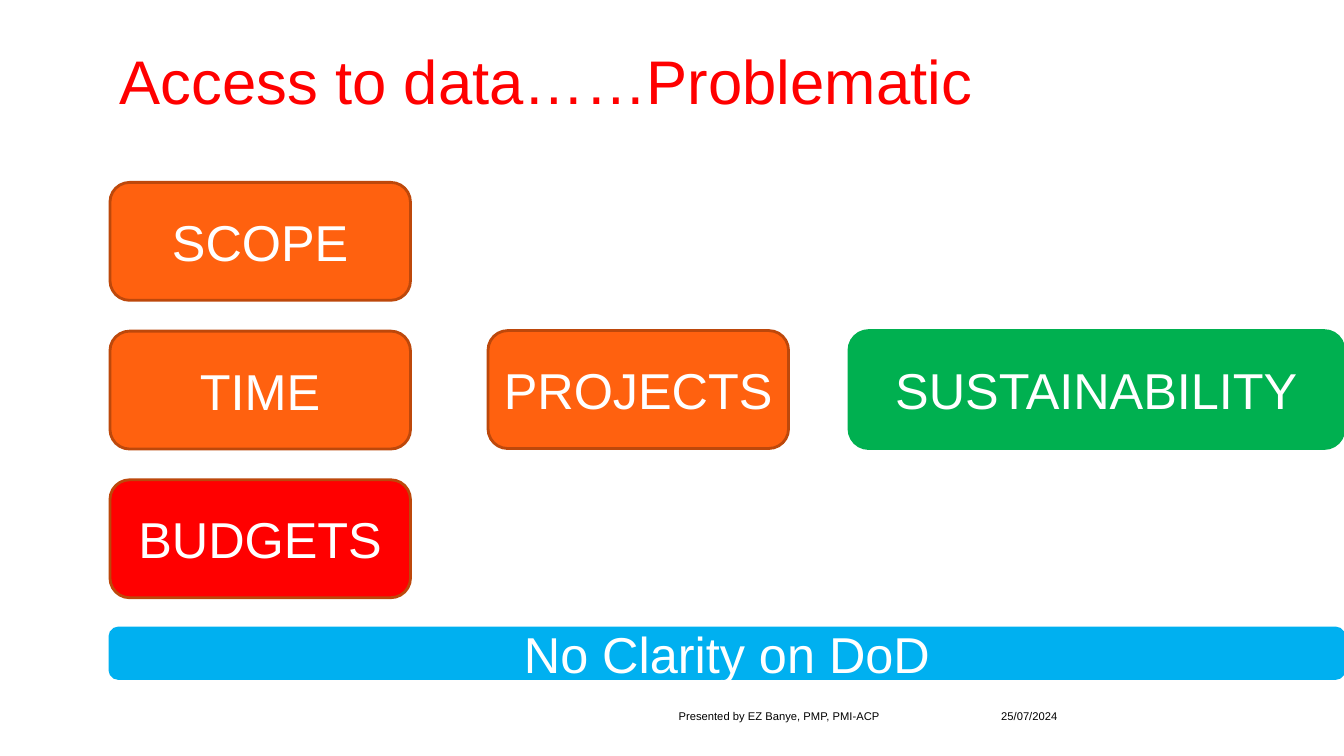
from dataclasses import dataclass

from pptx import Presentation
from pptx.dml.color import RGBColor
from pptx.enum.shapes import MSO_SHAPE
from pptx.enum.text import MSO_ANCHOR, MSO_AUTO_SIZE, PP_ALIGN
from pptx.util import Inches, Pt

ROUND = MSO_SHAPE.ROUNDED_RECTANGLE
MIDDLE, BOTTOM, TOP = MSO_ANCHOR.MIDDLE, MSO_ANCHOR.BOTTOM, MSO_ANCHOR.TOP
CENTER, LEFT = PP_ALIGN.CENTER, PP_ALIGN.LEFT
GROW, FIXED = MSO_AUTO_SIZE.SHAPE_TO_FIT_TEXT, MSO_AUTO_SIZE.NONE
GRID = 100


@dataclass(frozen=True)
class Theme:
    font: str = "Arial"
    head: int = 44
    label: int = 36
    foot: int = 8
    line: int = 2
    orange: str = "FF610F"
    rust: str = "BD480B"
    red: str = "FF0000"
    green: str = "00B050"
    blue: str = "00B0F0"
    white: str = "FFFFFF"
    black: str = "000000"


def apply(target, values):
    for name, value in values.items():
        setattr(target, name, value)


class Deck:
    def __init__(self, theme):
        self.theme = theme
        self.show = Presentation()
        apply(self.show, {"slide_width": Inches(13.33), "slide_height": Inches(7.5)})
        self.slide = self.show.slides.add_slide(self.show.slide_layouts[6])

    def place(self, col, row, cols, rows):
        wide, high = self.show.slide_width, self.show.slide_height
        pairs = (col, wide), (row, high), (cols, wide), (rows, high)
        return [round(part * whole / GRID) for part, whole in pairs]

    def label(self, shape, text, size, color, align, frame):
        apply(shape.text_frame, {"word_wrap": True, **frame})
        para = shape.text_frame.paragraphs[0]
        para.alignment = align
        run = para.add_run()
        run.text = text
        apply(run.font, {"name": self.theme.font, "size": Pt(size)})
        run.font.color.rgb = RGBColor.from_string(color)

    def box(self, text, cell, fill, edge):
        shape = self.slide.shapes.add_shape(ROUND, *self.place(*cell))
        shape.shadow.inherit = False
        shape.fill.solid()
        shape.fill.fore_color.rgb = RGBColor.from_string(fill)
        shape.line.color.rgb = RGBColor.from_string(edge)
        shape.line.width = Pt(self.theme.line)
        frame = {"vertical_anchor": MIDDLE}
        self.label(shape, text, self.theme.label, self.theme.white, CENTER, frame)

    def title(self, text, cell):
        shape = self.slide.shapes.add_textbox(*self.place(*cell))
        frame = {"vertical_anchor": TOP, "auto_size": GROW}
        self.label(shape, text, self.theme.head, self.theme.red, LEFT, frame)

    def footer(self, text, cell):
        shape = self.slide.shapes.add_textbox(*self.place(*cell))
        frame = {"vertical_anchor": BOTTOM, "auto_size": FIXED}
        frame |= {f"margin_{side}": 0 for side in ("left", "right", "top", "bottom")}
        self.label(shape, text, self.theme.foot, self.theme.black, LEFT, frame)


def main():
    theme = Theme()
    deck = Deck(theme)
    left, top, step = 8.18, 24.13, 19.67
    wide, high = 22.36, 15.6
    mid, right, center = 36.31, 63.17, 43.73

    deck.footer("25/07/2024", (74.49, 92.67, 14.93, 2.93))
    deck.footer("Presented by EZ Banye, PMP, PMI-ACP", (50.49, 92.67, 22.96, 2.93))

    limits = ("SCOPE", theme.orange), ("TIME", theme.orange), ("BUDGETS", theme.red)
    for i, (name, fill) in enumerate(limits):
        deck.box(name, (left, top + i * step, wide, high), fill, theme.rust)

    deck.box("PROJECTS", (mid, center, wide, high), theme.orange, theme.rust)
    goal = (right, center, GRID - right, high)
    deck.box("SUSTAINABILITY", goal, theme.green, theme.green)
    deck.title("Access to data……Problematic", (left, 5.07, 71.49, 11.2))
    base = (left, 83.07, GRID - left, 6.67)
    deck.box("No Clarity on DoD", base, theme.blue, theme.blue)
    deck.show.save("out.pptx")


if __name__ == "__main__":
    main()
